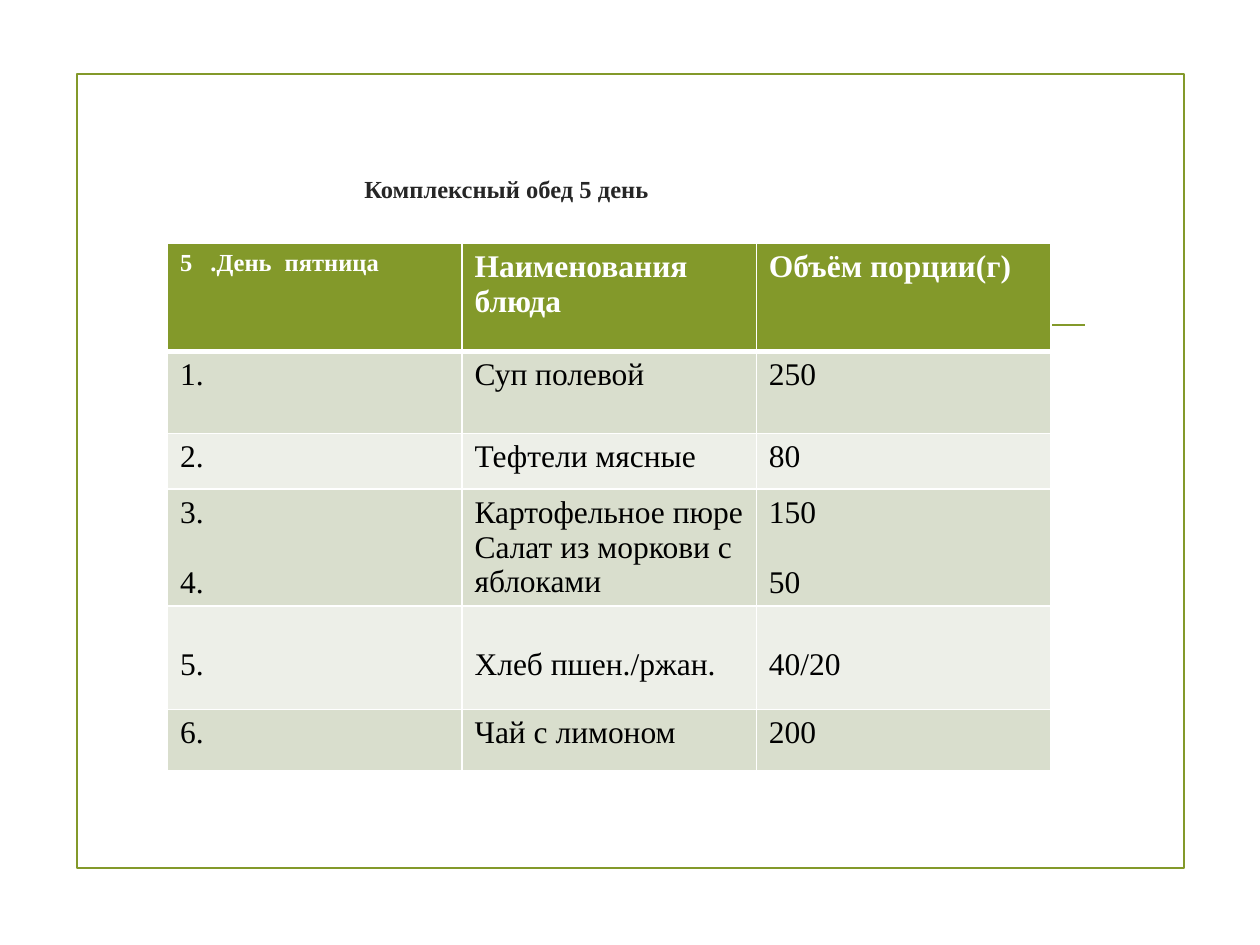
from dataclasses import dataclass

from lxml import etree
from pptx import Presentation
from pptx.dml.color import RGBColor
from pptx.enum.shapes import MSO_CONNECTOR, MSO_SHAPE
from pptx.enum.text import MSO_ANCHOR, PP_ALIGN
from pptx.oxml.ns import qn
from pptx.util import Inches, Pt

RECT = MSO_SHAPE.RECTANGLE
LINE = MSO_CONNECTOR.STRAIGHT
MIDDLE = MSO_ANCHOR.MIDDLE
CENTER = PP_ALIGN.CENTER


@dataclass(frozen=True)
class Theme:
    face: str = "Times New Roman"
    green: str = "83992A"
    dark: str = "262626"
    black: str = "000000"
    white: str = "FFFFFF"
    bands: tuple = ("D9DECD", "EDEFE8")
    small: int = 14
    size: int = 18
    stroke: float = 1.25


THEME = Theme()
HEAD = ["5\t.День\tпятница", "Наименования блюда", "Объём порции(г)"]
MEALS = [
    ["1.", "Суп полевой", "250"],
    ["2.", "Тефтели мясные", "80"],
    ["3.\n4.", "Картофельное пюре\nСалат из моркови с яблоками", "150\n50"],
    ["5.", "Хлеб пшен./ржан.", "40/20"],
    ["6.", "Чай с лимоном", "200"],
]
ROWS = [0.86, 0.65, 0.44, 0.93, 0.82, 0.49]
TABS = [0.24, 0.83]
SPLIT, LOW = 3, 4
GAP = 20


def rgb(code):
    return RGBColor.from_string(code)


def style(font, size, color, bold):
    values = {"name": THEME.face, "size": Pt(size), "bold": bold}
    for key, value in values.items():
        setattr(font, key, value)
    font.color.rgb = rgb(color)


def stroke(line):
    line.color.rgb = rgb(THEME.green)
    line.width = Pt(THEME.stroke)


def add_frame(slide, x, y, w, h):
    box = slide.shapes.add_shape(RECT, Inches(x), Inches(y), Inches(w), Inches(h))
    box.shadow.inherit = False
    box.fill.background()
    stroke(box.line)
    left, right, top = x + 0.79, x + w - 0.79, y + 1.99
    rule = slide.shapes.add_connector(
        LINE, Inches(left), Inches(top), Inches(right), Inches(top))
    stroke(rule.line)
    etree.SubElement(rule.element.spPr, qn("a:effectLst"))


def add_title(slide, x, y, w, h):
    title = slide.shapes.title
    place = {"left": x, "top": y, "width": w, "height": h}
    for key, value in place.items():
        setattr(title, key, Inches(value))
    frame = title.text_frame
    frame.text = "Комплексный обед 5 день"
    frame.vertical_anchor = MIDDLE
    para = frame.paragraphs[0]
    para.alignment = CENTER
    style(para.runs[0].font, THEME.small, THEME.dark, True)


def add_edges(cell, head):
    props = cell._tc.get_or_add_tcPr()
    for side in "LRTB":
        width = 3 if head and side == "B" else 1
        edge = etree.SubElement(props, qn(f"a:ln{side}"), w=str(Pt(width)))
        fill = etree.SubElement(edge, qn("a:solidFill"))
        etree.SubElement(fill, qn("a:srgbClr"), val=THEME.white)


def add_tabs(para):
    stops = etree.SubElement(para._p.get_or_add_pPr(), qn("a:tabLst"))
    for stop in TABS:
        etree.SubElement(stops, qn("a:tab"), pos=str(Inches(stop)), algn="l")


def fill_cell(cell, text, row, col):
    head = row == 0
    add_edges(cell, head)
    cell.fill.solid()
    cell.fill.fore_color.rgb = rgb(THEME.green if head else THEME.bands[(row - 1) % 2])
    if row == LOW + 0:
        cell.margin_top = Inches(0.05) + Pt(GAP)
    cell.text = text
    size = THEME.small if head and col == 0 else THEME.size
    color = THEME.white if head else THEME.black
    for index, para in enumerate(cell.text_frame.paragraphs):
        if "\t" in text:
            add_tabs(para)
        if row == SPLIT and index and col != 1:
            para.space_before = Pt(GAP)
        for run in para.runs:
            style(run.font, size, color, head)


def add_menu(slide, x, y, w):
    data = [HEAD, *MEALS]
    table = slide.shapes.add_table(
        len(data), len(HEAD), Inches(x), Inches(y), Inches(w), Inches(sum(ROWS))).table
    for col in table.columns:
        col.width = Inches(w / len(HEAD))
    for row, (texts, high) in enumerate(zip(data, ROWS)):
        table.rows[row].height = Inches(high)
        for col, text in enumerate(texts):
            fill_cell(table.cell(row, col), text, row, col)


def main():
    deck = Presentation()
    deck.slide_width, deck.slide_height = Inches(10), Inches(7.5)
    slide = deck.slides.add_slide(deck.slide_layouts[5])
    add_frame(slide, 0.61, 0.59, 8.79, 6.3)
    add_title(slide, 1.29, 1.25, 5.46, 0.5)
    add_menu(slide, 1.33, 1.93, 7.01)
    deck.save("out.pptx")


if __name__ == "__main__":
    main()
